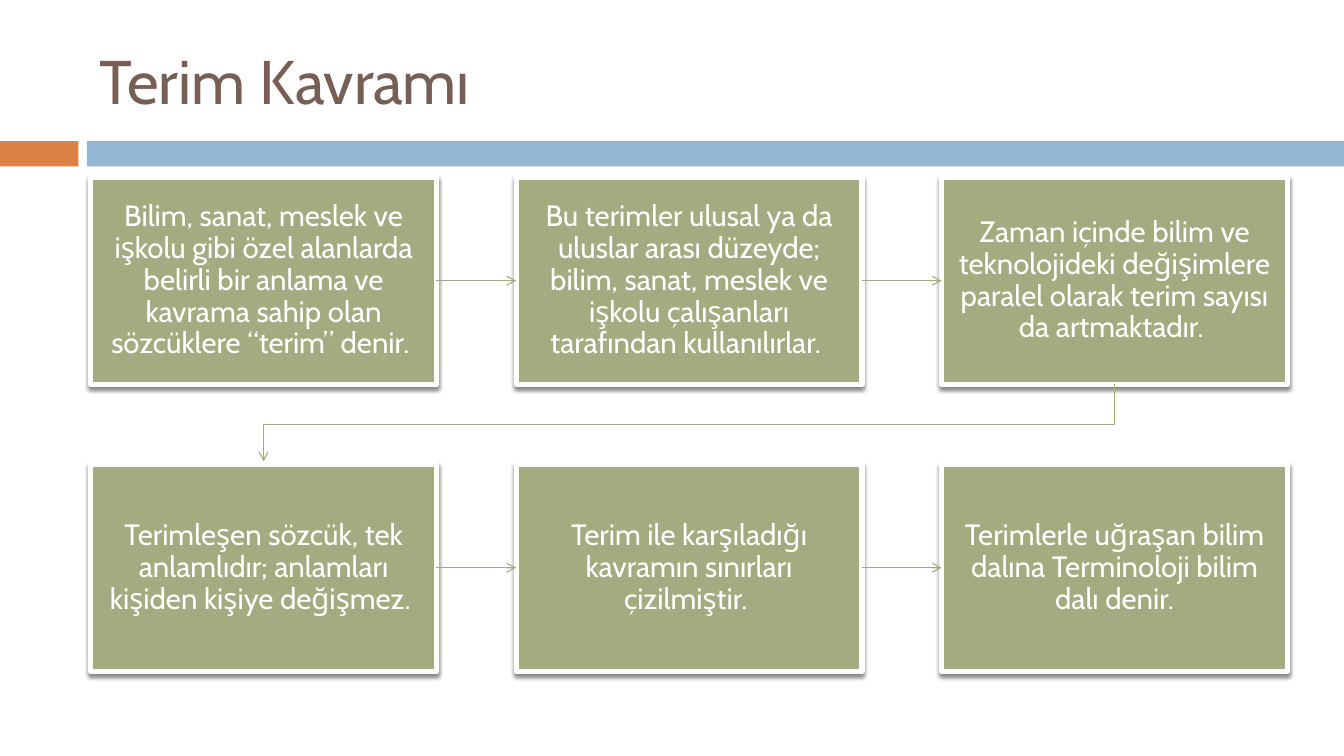
from dataclasses import dataclass

from lxml.etree import SubElement
from pptx import Presentation
from pptx.dml.color import RGBColor
from pptx.enum.shapes import MSO_CONNECTOR as Connector, MSO_SHAPE as Shape
from pptx.enum.text import MSO_ANCHOR as Anchor, PP_ALIGN as Align
from pptx.oxml.ns import qn
from pptx.util import Pt


@dataclass(frozen=True)
class Theme:
    """Colours, font and sizes of the slide."""
    font: str = "Cabin"
    title_colour: str = "775F55"
    accent: str = "DD8047"
    band: str = "94B6D2"
    box: str = "A5AB81"
    white: str = "FFFFFF"
    shadow: str = "000000"
    title_size: float = 44
    body_size: float = 21
    border: float = 3.75
    arrow: float = 0.79


def write(shape, text, size, colour, font, align=Align.LEFT, spacing=1.0, margins=(7.2, 3.6)):
    """Put formatted text into a shape."""
    frame = shape.text_frame
    frame.word_wrap = True
    frame.vertical_anchor = Anchor.MIDDLE
    frame.margin_left = frame.margin_right = Pt(margins[0])
    frame.margin_top = frame.margin_bottom = Pt(margins[1])
    paragraph = frame.paragraphs[0]
    paragraph.alignment = align
    paragraph.line_spacing = spacing
    run = paragraph.add_run()
    run.text = text
    run.font.name = font
    run.font.size = Pt(size)
    run.font.color.rgb = RGBColor.from_string(colour)


class SlideBuilder:
    """Draws the elements of one slide in one theme."""

    def __init__(self, slide, theme):
        """Keep the slide and the theme."""
        self.slide = slide
        self.theme = theme

    def title(self, text, left, top, width, height):
        """Add the slide title."""
        shape = self.slide.shapes.add_textbox(Pt(left), Pt(top), Pt(width), Pt(height))
        write(shape, text, self.theme.title_size, self.theme.title_colour, self.theme.font)

    def bar(self, left, top, width, height, colour):
        """Add a plain filled rectangle."""
        shape = self.slide.shapes.add_shape(
            Shape.RECTANGLE, Pt(left), Pt(top), Pt(width), Pt(height))
        shape.shadow.inherit = False
        shape.fill.solid()
        shape.fill.fore_color.rgb = RGBColor.from_string(colour)
        shape.line.fill.background()
        return shape

    def box(self, text, left, top, width, height):
        """Add a bordered step box with a soft shadow."""
        theme = self.theme
        shape = self.bar(left, top, width, height, theme.box)
        shape.line.color.rgb = RGBColor.from_string(theme.white)
        shape.line.width = Pt(theme.border)
        effects = shape._element.spPr.find(qn("a:effectLst"))
        shadow = SubElement(effects, qn("a:outerShdw"), blurRad=str(Pt(3)),
                            dist=str(Pt(2.4)), dir="5400000", rotWithShape="0")
        colour = SubElement(shadow, qn("a:srgbClr"), val=theme.shadow)
        SubElement(colour, qn("a:alpha"), val="45000")
        write(shape, text, theme.body_size, theme.white, theme.font,
              align=Align.CENTER, spacing=0.9, margins=(12.24, 12.96))
        return shape

    def style_arrow(self, shape):
        """Give a line its colour, width and arrowhead."""
        shape.line.color.rgb = RGBColor.from_string(self.theme.box)
        shape.line.width = Pt(self.theme.arrow)
        SubElement(shape.line._get_or_add_ln(), qn("a:tailEnd"), type="arrow")

    def arrow(self, source, target):
        """Join two neighbouring boxes from right side to left side."""
        connector = self.slide.shapes.add_connector(Connector.STRAIGHT, 0, 0, 0, 0)
        connector.begin_connect(source, 3)
        connector.end_connect(target, 1)
        self.style_arrow(connector)
        SubElement(connector._element.spPr, qn("a:effectLst"))

    def bent_arrow(self, points):
        """Add an arrow that follows the given points."""
        start, *others = [(Pt(x), Pt(y)) for x, y in points]
        builder = self.slide.shapes.build_freeform(*start)
        builder.add_line_segments(others, close=False)
        shape = builder.convert_to_shape()
        shape.fill.background()
        shape.shadow.inherit = False
        self.style_arrow(shape)


STEPS = [
    [
        "Bilim, sanat, meslek ve işkolu gibi özel alanlarda belirli bir anlama "
        "ve kavrama sahip olan sözcüklere “terim” denir. ",
        "Bu terimler ulusal ya da uluslar arası düzeyde; bilim, sanat, meslek ve "
        "işkolu çalışanları tarafından kullanılırlar. ",
        "Zaman içinde bilim ve teknolojideki değişimlere paralel olarak terim "
        "sayısı da artmaktadır. ",
    ],
    [
        "Terimleşen sözcük, tek anlamlıdır; anlamları kişiden kişiye değişmez. ",
        "Terim ile karşıladığı kavramın sınırları çizilmiştir. ",
        "Terimlerle uğraşan bilim dalına Terminoloji bilim dalı denir.",
    ],
]
LEFT, TOP = 64.8, 126.5
BOX_WIDTH, BOX_HEIGHT = 247, 148
COLUMN_STEP, ROW_STEP = 303.9, 205


def main():
    """Build and save the slide."""
    presentation = Presentation()
    presentation.slide_width, presentation.slide_height = Pt(960), Pt(540)
    slide = presentation.slides.add_slide(presentation.slide_layouts[6])
    theme = Theme()
    builder = SlideBuilder(slide, theme)

    builder.bar(0, 100.8, 56, 18, theme.accent)
    builder.bar(62, 100.8, 898, 18, theme.band)
    builder.title("Terim Kavramı", 64, 18, 856, 78)

    for row, texts in enumerate(STEPS):
        boxes = [
            builder.box(text, LEFT + column * COLUMN_STEP, TOP + row * ROW_STEP,
                        BOX_WIDTH, BOX_HEIGHT)
            for column, text in enumerate(texts)
        ]
        for source, target in zip(boxes, boxes[1:]):
            builder.arrow(source, target)

    first_centre = LEFT + BOX_WIDTH / 2
    last_centre = first_centre + 2 * COLUMN_STEP
    bottom, next_top = TOP + BOX_HEIGHT, TOP + ROW_STEP
    middle = (bottom + next_top) / 2
    builder.bent_arrow([(last_centre, bottom), (last_centre, middle),
                        (first_centre, middle), (first_centre, next_top - 2)])

    presentation.save("out.pptx")


if __name__ == "__main__":
    main()
